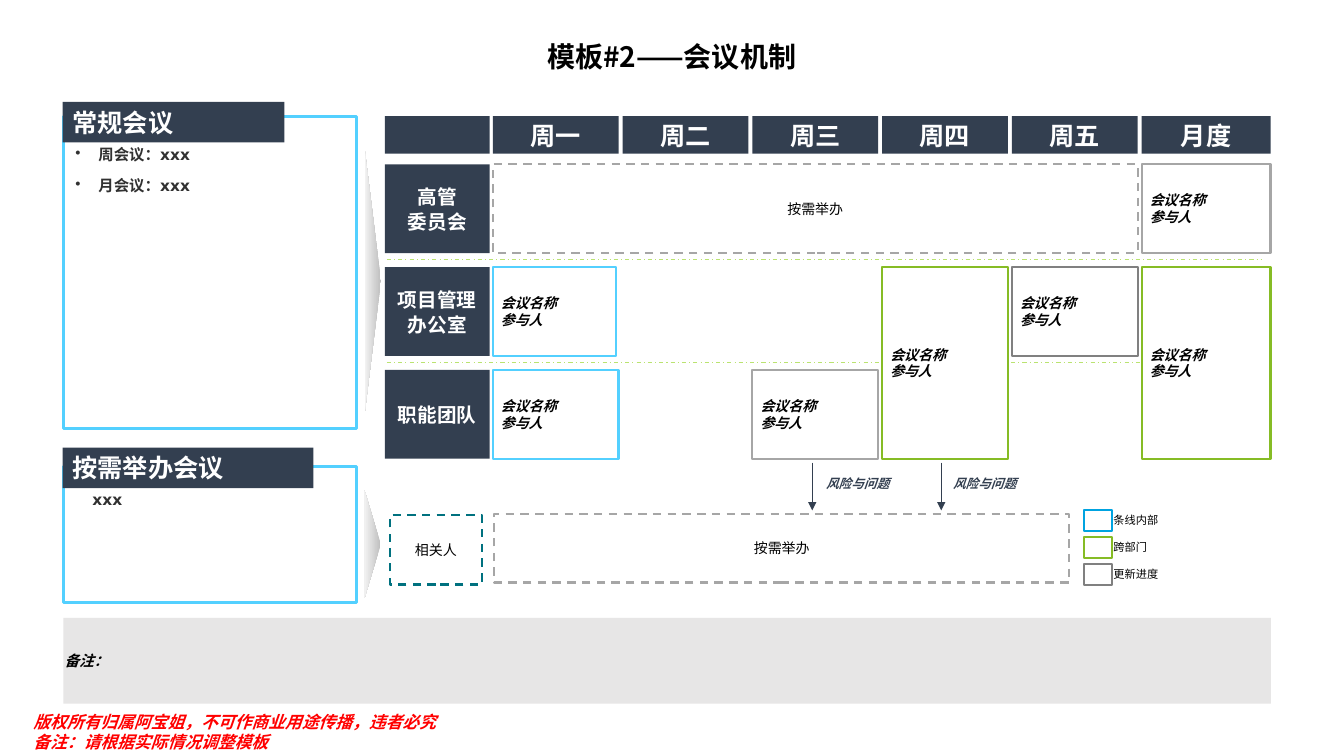
from dataclasses import dataclass

import lxml.etree
import pptx
import pptx.dml.color
import pptx.enum.dml
import pptx.enum.shapes
import pptx.enum.text
import pptx.oxml.ns
import pptx.util

Cm = pptx.util.Cm
Pt = pptx.util.Pt
qn = pptx.oxml.ns.qn
ALIGN = pptx.enum.text.PP_ALIGN
ANCHOR = pptx.enum.text.MSO_ANCHOR
DASH = pptx.enum.dml.MSO_LINE
SHAPE = pptx.enum.shapes.MSO_SHAPE


@dataclass(frozen=True)
class Theme:
    navy: str = "333F50"
    sky: str = "53D0FF"
    blue: str = "00A3E0"
    green: str = "86BC25"
    lime: str = "BAE370"
    teal: str = "00717F"
    silver: str = "A6A6A6"
    gray: str = "808080"
    note: str = "E7E6E6"
    wedge_tip: str = "BFBFBF"
    wedge_base: str = "F2F2F2"
    ink: str = "313131"
    black: str = "000000"
    white: str = "FFFFFF"
    red: str = "FF0000"
    heading_font: str = "Noto Sans CJK SC"
    body_font: str = "DejaVu Sans"
    title: float = 20
    heading: float = 18
    row_label: float = 14
    copyright: float = 12
    item: float = 11
    remark: float = 10.5
    meeting: float = 10
    risk: float = 9
    legend: float = 8


THEME = Theme()


@dataclass(frozen=True)
class Box:
    """Place and size in centimetres."""
    left: float
    top: float
    width: float
    height: float

    def lengths(self) -> list:
        return [Cm(v) for v in (self.left, self.top, self.width, self.height)]


@dataclass(frozen=True)
class Meeting:
    column: int
    row: int
    color: str
    rows: int = 1
    trim: float = 0


@dataclass(frozen=True)
class Panel:
    heading: str
    heading_box: Box
    frame: Box
    frame_line: float
    items: str
    items_box: Box
    bullets: bool
    wedge: Box


# Weekly calendar grid, in centimetres
DAYS = ["周一", "周二", "周三", "周四", "周五", "月度"]
TEAMS = ["高管\n委员会", "项目管理\n办公室", "职能团队"]
GRID_LEFT, COLUMN_PITCH, DAY_WIDTH, MONTH_WIDTH = 12.42, 3.27, 3.17, 3.25
GRID_TOP, ROW_PITCH, ROW_HEIGHT = 4.14, 2.59, 2.24
HEADER_TOP, HEADER_HEIGHT = 2.93, 0.94
TEAM_LEFT, TEAM_WIDTH = 9.7, 2.64

MEETINGS = [
    Meeting(0, 1, THEME.sky, trim=0.07),
    Meeting(0, 2, THEME.sky),
    Meeting(2, 2, THEME.silver),
    Meeting(5, 0, THEME.silver),
    Meeting(4, 1, THEME.gray),
    Meeting(3, 1, THEME.green, rows=2),
    Meeting(5, 1, THEME.green, rows=2),
]
PANELS = [
    Panel("常规会议", Box(1.58, 2.57, 5.59, 1.02), Box(1.6, 2.93, 7.39, 7.87), 2,
          "周会议：xxx\n月会议：xxx", Box(1.65, 3.53, 7.32, 1.55), True,
          Box(6.07, 6.88, 6.65, 0.41)),
    Panel("按需举办会议", Box(1.58, 11.28, 6.32, 1.02), Box(1.6, 11.76, 7.39, 3.43), 2,
          "xxx", Box(2.08, 12.22, 7.24, 0.74), False,
          Box(8.03, 13.51, 2.72, 0.41)),
]
LEGEND = [("条线内部", THEME.blue), ("跨部门", THEME.green), ("更新进度", THEME.gray)]


def rgb(color: str) -> pptx.dml.color.RGBColor:
    return pptx.dml.color.RGBColor.from_string(color)


def write(frame, text: str, *, size: float, color: str = THEME.black,
          font: str = THEME.body_font, bold: bool = False, italic: bool = False,
          align=ALIGN.LEFT, anchor=ANCHOR.TOP, inset: tuple = (0.25, 0.13),
          spacing: float = 1, gap: float = 0, bullets: bool = False) -> None:
    frame.word_wrap = True
    frame.vertical_anchor = anchor
    frame.margin_left = frame.margin_right = Cm(inset[0])
    frame.margin_top = frame.margin_bottom = Cm(inset[1])
    for index, line in enumerate(text.split("\n")):
        paragraph = frame.add_paragraph() if index else frame.paragraphs[0]
        if bullets:
            props = paragraph._p.get_or_add_pPr()
            props.set("marL", str(Cm(0.58)))
            props.set("indent", str(-Cm(0.58)))
            lxml.etree.SubElement(props, qn("a:buChar")).set("char", "•")
        paragraph.alignment = align
        paragraph.line_spacing = spacing
        paragraph.space_before = Pt(gap if index else 0)
        paragraph.space_after = Pt(gap)
        run = paragraph.add_run()
        run.text = line
        run.font.name, run.font.size = font, Pt(size)
        run.font.bold, run.font.italic = bold, italic
        run.font.color.rgb = rgb(color)
        east_asian = lxml.etree.SubElement(run._r.get_or_add_rPr(), qn("a:ea"))
        east_asian.set("typeface", font)


def add_rect(slide, box: Box, fill: str = "", line: str = "",
             width: float = 1.5, dashed: bool = False):
    rect = slide.shapes.add_shape(SHAPE.RECTANGLE, *box.lengths())
    rect.shadow.inherit = False
    if fill:
        rect.fill.solid()
        rect.fill.fore_color.rgb = rgb(fill)
    else:
        rect.fill.background()
    if line:
        rect.line.color.rgb = rgb(line)
        rect.line.width = Pt(width)
        if dashed:
            rect.line.dash_style = DASH.DASH
    else:
        rect.line.fill.background()
    return rect.text_frame


def add_label(slide, box: Box, text: str, **style) -> None:
    write(slide.shapes.add_textbox(*box.lengths()).text_frame, text, **style)


def add_header(slide, box: Box, text: str, size: float) -> None:
    write(add_rect(slide, box, THEME.navy), text, size=size, color=THEME.white,
          font=THEME.heading_font, bold=True, align=ALIGN.CENTER,
          anchor=ANCHOR.MIDDLE, inset=(0.18, 0.18), spacing=1.06)


def add_on_demand(slide, box: Box, text: str, line: str, side: float) -> None:
    write(add_rect(slide, box, THEME.white, line, dashed=True), text,
          size=THEME.meeting, align=ALIGN.CENTER, anchor=ANCHOR.MIDDLE,
          inset=(side, 0.1))


def add_line(slide, start: tuple, end: tuple, color: str, arrow: bool = False) -> None:
    connector = slide.shapes.add_connector(
        pptx.enum.shapes.MSO_CONNECTOR.STRAIGHT, *[Cm(v) for v in start + end])
    connector.line.color.rgb = rgb(color)
    connector.line.width = Pt(0.75)
    properties = connector.element.spPr
    if arrow:
        tail = lxml.etree.SubElement(properties.find(qn("a:ln")), qn("a:tailEnd"))
        tail.set("type", "triangle")
    else:
        connector.line.dash_style = DASH.DASH_DOT
    lxml.etree.SubElement(properties, qn("a:effectLst"))


def add_wedge(slide, box: Box) -> None:
    wedge = slide.shapes.add_shape(SHAPE.ISOSCELES_TRIANGLE, *box.lengths())
    wedge.rotation = 90
    wedge.shadow.inherit = False
    wedge.line.fill.background()
    wedge.fill.gradient()
    wedge.fill.gradient_angle = 270
    stops = zip(wedge.fill.gradient_stops, (0.01, 1), (THEME.wedge_tip, THEME.wedge_base))
    for stop, position, color in stops:
        stop.position = position
        stop.color.rgb = rgb(color)


def add_panel(slide, panel: Panel) -> None:
    add_label(slide, panel.items_box, panel.items, size=THEME.item, color=THEME.ink,
              bold=True, gap=4.5, bullets=panel.bullets)
    add_rect(slide, panel.frame, line=THEME.sky, width=panel.frame_line)
    write(add_rect(slide, panel.heading_box, THEME.navy), panel.heading,
          size=THEME.heading, color=THEME.white, font=THEME.heading_font, bold=True)
    add_wedge(slide, panel.wedge)


def grid_box(column: int, row: int, rows: int = 1, trim: float = 0) -> Box:
    width = MONTH_WIDTH if column == len(DAYS) - 1 else DAY_WIDTH
    return Box(GRID_LEFT + column * COLUMN_PITCH, GRID_TOP + row * ROW_PITCH,
               width - trim, ROW_HEIGHT + (rows - 1) * ROW_PITCH)


def add_calendar(slide) -> None:
    # Day headers and team labels
    add_rect(slide, Box(TEAM_LEFT, HEADER_TOP, TEAM_WIDTH, HEADER_HEIGHT), THEME.navy)
    for column, day in enumerate(DAYS):
        cell = grid_box(column, 0)
        add_header(slide, Box(cell.left, HEADER_TOP, cell.width, HEADER_HEIGHT),
                   day, THEME.heading)
    for row, team in enumerate(TEAMS):
        top = GRID_TOP + row * ROW_PITCH
        add_header(slide, Box(TEAM_LEFT, top, TEAM_WIDTH, ROW_HEIGHT), team, THEME.row_label)

    # Row dividers, then the meetings over them
    for row in (1, 2):
        y = GRID_TOP + row * ROW_PITCH - 0.18
        add_line(slide, (9.75, y), (31.8, y), THEME.lime)
    add_on_demand(slide, Box(GRID_LEFT, GRID_TOP, 4 * COLUMN_PITCH + DAY_WIDTH, ROW_HEIGHT),
                  "按需举办", THEME.silver, 0.25)
    for meeting in MEETINGS:
        box = grid_box(meeting.column, meeting.row, meeting.rows, meeting.trim)
        write(add_rect(slide, box, THEME.white, meeting.color), "会议名称\n参与人",
              size=THEME.meeting, bold=True, italic=True, anchor=ANCHOR.MIDDLE,
              inset=(0.2, 0.1))


def main() -> None:
    deck = pptx.Presentation()
    deck.slide_width, deck.slide_height = Cm(33.87), Cm(19.05)
    slide = deck.slides.add_slide(deck.slide_layouts[6])

    add_label(slide, Box(11.3, 0.99, 11.25, 0.94), "模板#2——会议机制", size=THEME.title,
              font=THEME.heading_font, bold=True, align=ALIGN.CENTER, inset=(0, 0))
    for panel in PANELS:
        add_panel(slide, panel)
    add_calendar(slide)

    # Escalation of risks to on-demand meetings
    for arrow_x, label_left in ((20.47, 20.57), (23.72, 23.77)):
        add_line(slide, (arrow_x, 11.66), (arrow_x, 12.86), THEME.navy, arrow=True)
        add_label(slide, Box(label_left, 11.86, 3.33, 0.64), "风险与问题", size=THEME.risk,
                  color=THEME.navy, bold=True, italic=True)
    add_on_demand(slide, Box(9.83, 12.98, 2.31, 1.75), "相关人", THEME.teal, 0)
    add_on_demand(slide, Box(12.45, 12.95, 14.5, 1.73), "按需举办", THEME.silver, 0.18)

    # Legend
    for index, (name, color) in enumerate(LEGEND):
        top = 12.85 + index * 0.68
        add_rect(slide, Box(27.33, top, 0.69, 0.53), line=color)
        add_label(slide, Box(27.81, top - 0.05, 5.11, 0.61), name, size=THEME.legend)

    # Remarks and copyright
    write(add_rect(slide, Box(1.6, 15.57, 30.43, 2.16), THEME.note), "备注：",
          size=THEME.remark, bold=True, italic=True, anchor=ANCHOR.MIDDLE, inset=(0.03, 0.1))
    add_label(slide, Box(0.84, 17.93, 11.35, 1.02),
              "版权所有归属阿宝姐，不可作商业用途传播，违者必究\n备注：请根据实际情况调整模板",
              size=THEME.copyright, color=THEME.red, bold=True, italic=True, inset=(0, 0))
    deck.save("out.pptx")


if __name__ == "__main__":
    main()
